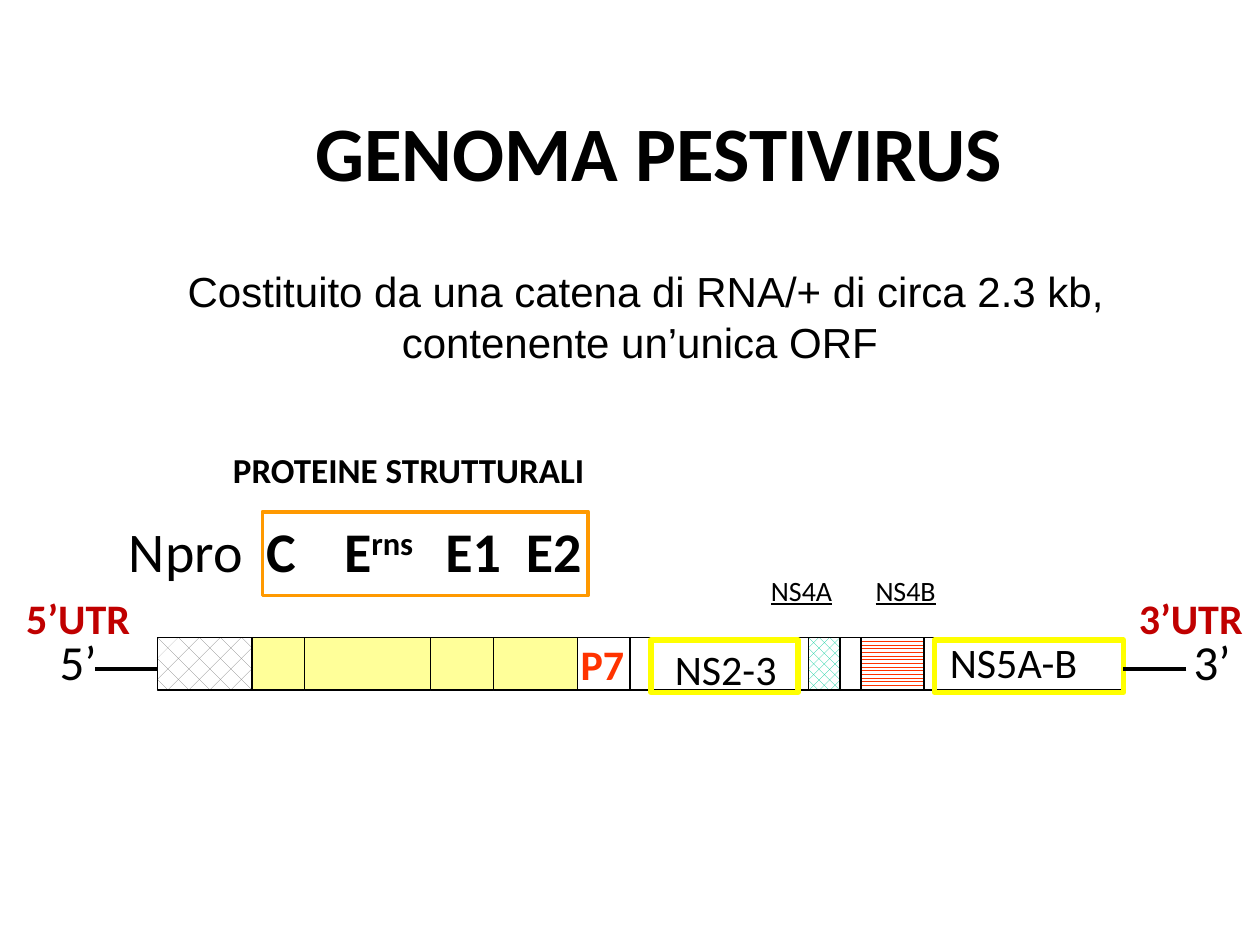
from dataclasses import dataclass

from lxml import etree
from pptx import Presentation
from pptx.dml.color import RGBColor
from pptx.enum.dml import MSO_PATTERN
from pptx.enum.shapes import MSO_CONNECTOR, MSO_SHAPE
from pptx.enum.text import MSO_ANCHOR, MSO_AUTO_SIZE, PP_ALIGN
from pptx.oxml.ns import qn
from pptx.util import Inches, Pt

BRICK = MSO_PATTERN.DIAGONAL_BRICK
WEAVE = MSO_PATTERN.WEAVE
ZIGZAG = MSO_PATTERN.ZIG_ZAG
RECT = MSO_SHAPE.RECTANGLE
LINE = MSO_CONNECTOR.STRAIGHT
TOP = MSO_ANCHOR.TOP
FIXED = MSO_AUTO_SIZE.NONE
LEFT = PP_ALIGN.LEFT
MID = PP_ALIGN.CENTER

COL = 1 / 12
TRACK = 5.06
DEEP = 5 * COL


@dataclass(frozen=True)
class Theme:
    ink: str = "000000"
    paper: str = "FFFFFF"
    cream: str = "FFFF99"
    gold: str = "FFFF00"
    amber: str = "FF9900"
    red: str = "C00000"
    flame: str = "FF3300"
    mint: str = "00CC99"
    gray: str = "808080"
    head: int = 44
    gene: int = 32
    end: int = 28
    text: int = 24
    label: int = 20
    small: int = 16
    thin: float = 0.75
    mark: float = 2.25
    bold: float = 3
    font: str = "Calibri"
    plain: str = "Arial"


THEME = Theme()


def rgb(code):
    return RGBColor.from_string(code)


def place(shape, left, top, wide, high):
    shape.left, shape.top = Inches(left), Inches(top)
    shape.width, shape.height = Inches(wide), Inches(high)


def add_run(para, text, size, tint=THEME.ink, bold=False, under=False,
            font=THEME.font, lift=0):
    run = para.add_run()
    run.text = text
    run.font.name = font
    run.font.size = Pt(size)
    run.font.bold = bold
    run.font.underline = under
    run.font.color.rgb = rgb(tint)
    if lift:
        run.font._element.set("baseline", str(lift * 1000))
    return run


def set_frame(shape, align, wrap):
    frame = shape.text_frame
    frame.word_wrap = wrap
    frame.auto_size = FIXED
    frame.vertical_anchor = TOP
    para = frame.paragraphs[0]
    para.alignment = align
    return para


def add_label(slide, box, text, size, align=MID, wrap=False, **style):
    shape = slide.shapes.add_textbox(*map(Inches, box))
    para = set_frame(shape, align, wrap)
    add_run(para, text, size, **style)
    return para


def fill_holder(shape, box, text, size, **style):
    place(shape, *box)
    para = set_frame(shape, MID, True)
    para.space_before = Pt(0)
    add_run(para, text, size, **style)


def add_box(slide, box, fill=None, weave=None, line=THEME.ink, width=THEME.thin):
    shape = slide.shapes.add_shape(RECT, *map(Inches, box))
    shape.shadow.inherit = False
    if weave:
        shape.fill.patterned()
        shape.fill.pattern = weave
        shape.fill.fore_color.rgb = rgb(fill)
        shape.fill.back_color.rgb = rgb(THEME.paper)
    elif fill:
        shape.fill.solid()
        shape.fill.fore_color.rgb = rgb(fill)
    else:
        shape.fill.background()
    shape.line.color.rgb = rgb(line)
    shape.line.width = Pt(width)


def add_part(slide, start, stop, top=TRACK, **style):
    add_box(slide, (start * COL, top, (stop - start) * COL, DEEP), **style)


def add_tail(slide, start, stop):
    y = Inches(TRACK + 3 * COL)
    line = slide.shapes.add_connector(
        LINE, Inches(start * COL), y, Inches(stop * COL), y)
    line.line.color.rgb = rgb(THEME.ink)
    line.line.width = Pt(THEME.mark)
    etree.SubElement(line._element.spPr, qn("a:effectLst"))


def add_ends(slide):
    for left, text in ((0.06, "5’UTR"), (8.89, "3’UTR")):
        add_label(slide, (left, 4.65, 1.12, 0.5), text, THEME.text,
                  tint=THEME.red, bold=True)
    for left, text in ((0.32, "5’"), (9.32, "3’")):
        add_label(slide, (left, 4.96, 0.6, 0.57), text, THEME.end)
    for start, stop in ((15, 9), (113, 107)):
        add_tail(slide, start, stop)


def add_track(slide):
    add_part(slide, 55, 107, fill=THEME.paper)
    add_part(slide, 15, 24, fill=THEME.gray, weave=BRICK)
    edges = (24, 29, 41, 47, 55)
    for start, stop in zip(edges, edges[1:]):
        add_part(slide, start, stop, fill=THEME.cream)
    add_part(slide, 55, 60)
    add_part(slide, 77, 80, fill=THEME.mint, weave=WEAVE)
    add_part(slide, 82, 88, fill=THEME.flame, weave=ZIGZAG)
    for start, stop in ((62, 76), (89, 107)):
        add_part(slide, start, stop, top=TRACK + 0.02,
                 line=THEME.gold, width=THEME.bold)


def add_names(slide):
    genes = ((0.92, 1.11, "Npro"), (2.01, 0.44, "C"), (2.6, 0.81, "E"),
             (3.43, 0.65, "E1"), (4.07, 0.65, "E2"))
    for left, wide, text in genes:
        para = add_label(slide, (left, 4.05, wide, 0.64), text, THEME.gene,
                         bold=text != "Npro")
        if text == "E":
            add_run(para, "rns", THEME.gene, bold=True, lift=30)
    add_box(slide, (25 * COL, 4.06, 31 * COL, 8 * COL),
            line=THEME.amber, width=THEME.mark)
    add_label(slide, (1.75, 3.51, 3.02, 0.44), "PROTEINE STRUTTURALI",
              THEME.label, LEFT, bold=True)
    add_label(slide, (5.25, 5.06, 1.02, 0.5), "NS2-3", THEME.text)
    add_label(slide, (7.44, 5, 1.22, 0.5), "NS5A-B", THEME.text, LEFT)
    add_label(slide, (4.51, 5.02, 0.62, 0.5), "P7", THEME.text, LEFT, True,
              tint=THEME.flame, bold=True)
    for left, text in ((6.02, "NS4A"), (6.85, "NS4B")):
        add_label(slide, (left, 4.5, 0.69, 0.37), text, THEME.small, LEFT,
                  under=True)


def main():
    deck = Presentation()
    deck.slide_width, deck.slide_height = Inches(10), Inches(7.5)
    slide = deck.slides.add_slide(deck.slide_layouts[0])
    fill_holder(slide.shapes.title, (1.31, 0.78, 7.84, 0.83),
                "GENOMA PESTIVIRUS", THEME.head, bold=True)
    fill_holder(slide.placeholders[1], (1.2, 2.06, 7.85, 0.91),
                "Costituito da una catena di RNA/+ di circa 2.3 kb, "
                "contenente un’unica ORF ", THEME.text, font=THEME.plain)
    add_track(slide)
    add_ends(slide)
    add_names(slide)
    deck.save("out.pptx")


if __name__ == "__main__":
    main()
